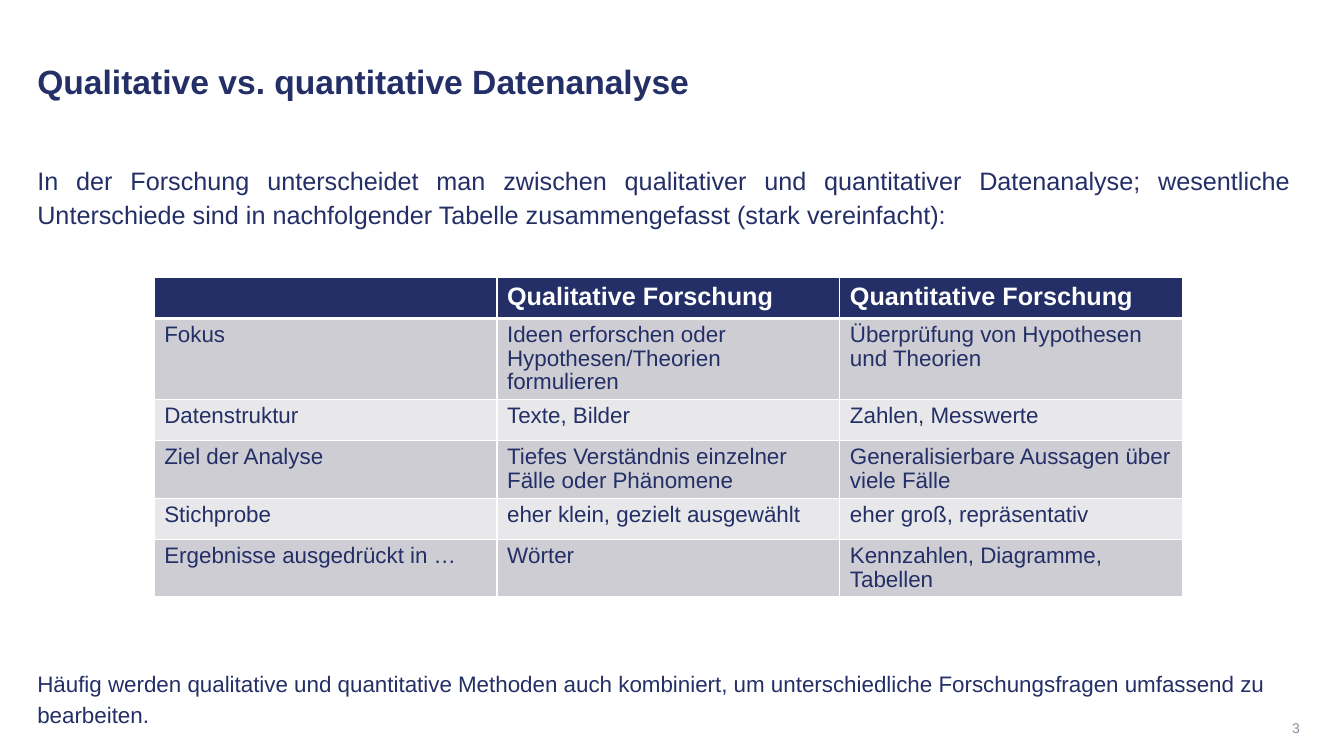
from lxml.etree import SubElement
from pptx import Presentation
from pptx.dml.color import RGBColor
from pptx.enum.text import MSO_ANCHOR, MSO_AUTO_SIZE, PP_ALIGN
from pptx.oxml.ns import qn
from pptx.util import Inches, Pt

COLORS = {
    "navy": "232F66",
    "white": "FFFFFF",
    "dark_band": "CDCDD3",
    "light_band": "E8E8EA",
    "page_number": "8D8FA0",
}

INTRO = ("In der Forschung unterscheidet man zwischen qualitativer und quantitativer "
         "Datenanalyse; wesentliche Unterschiede sind in nachfolgender Tabelle "
         "zusammengefasst (stark vereinfacht):")
CONCLUSION = ("Häufig werden qualitative und quantitative Methoden auch kombiniert, um "
              "unterschiedliche Forschungsfragen umfassend zu bearbeiten.")
COMPARISON = [
    ("", "Qualitative Forschung", "Quantitative Forschung"),
    ("Fokus", "Ideen erforschen oder Hypothesen/Theorien formulieren",
     "Überprüfung von Hypothesen und Theorien"),
    ("Datenstruktur", "Texte, Bilder", "Zahlen, Messwerte"),
    ("Ziel der Analyse", "Tiefes Verständnis einzelner Fälle oder Phänomene",
     "Generalisierbare Aussagen über viele Fälle"),
    ("Stichprobe", "eher klein, gezielt ausgewählt", "eher groß, repräsentativ"),
    ("Ergebnisse ausgedrückt in …", "Wörter", "Kennzahlen, Diagramme, Tabellen"),
]


class SlideBuilder:
    font = "Arial"

    def __init__(self, page):
        self.page = page

    def add_span(self, para, text, size, color="navy", bold=False,
                 align=PP_ALIGN.LEFT, spacing=1.0, before=0):
        para.alignment = align
        para.line_spacing = spacing
        para.space_before = Pt(before)
        span = para.add_run()
        span.text = text
        span.font.name = self.font
        span.font.size = Pt(size)
        span.font.bold = bold
        span.font.color.rgb = RGBColor.from_string(COLORS[color])

    def place(self, box, left, top, width, height, anchor=MSO_ANCHOR.TOP):
        box.left, box.top = Inches(left), Inches(top)
        box.width, box.height = Inches(width), Inches(height)
        frame = box.text_frame
        frame.word_wrap = True
        frame.auto_size = MSO_AUTO_SIZE.NONE
        frame.vertical_anchor = anchor
        return frame

    def title(self, text, *bounds):
        frame = self.place(self.page.shapes.title, *bounds)
        self.add_span(frame.paragraphs[0], text, 24, bold=True, spacing=1.15, before=10)

    def body(self, entries, *bounds):
        frame = self.place(self.page.placeholders[1], *bounds)
        for index, (text, size, align, before) in enumerate(entries):
            para = frame.add_paragraph() if index else frame.paragraphs[0]
            self.add_span(para, text, size, align=align, spacing=1.15, before=before)
            # Plain text without bullet or indent
            properties = para._p.get_or_add_pPr()
            properties.set("marL", "0")
            properties.set("indent", "0")
            SubElement(properties, qn("a:buNone"))

    def page_number(self, text, *bounds):
        box = self.page.shapes.add_textbox(0, 0, 0, 0)
        frame = self.place(box, *bounds, anchor=MSO_ANCHOR.MIDDLE)
        self.add_span(frame.paragraphs[0], text, 10, "page_number", align=PP_ALIGN.RIGHT)

    def borders(self, cell, **widths):
        properties = cell._tc.get_or_add_tcPr()
        for position, (side, width) in enumerate(widths.items()):
            line = SubElement(properties, qn(f"a:ln{side}"), w=str(Pt(width)))
            fill = SubElement(line, qn("a:solidFill"))
            SubElement(fill, qn("a:srgbClr"), val=COLORS["white"])
            # Border lines come before the cell fill
            properties.insert(position, line)

    def table(self, rows, left, top, column_width, row_height):
        columns = len(rows[0])
        table = self.page.shapes.add_table(
            len(rows), columns, Inches(left), Inches(top),
            Inches(column_width * columns), Inches(row_height * len(rows))).table
        for column in table.columns:
            column.width = Inches(column_width)
        for r, texts in enumerate(rows):
            table.rows[r].height = Inches(row_height)
            header = r == 0
            band = "navy" if header else ("dark_band" if r % 2 else "light_band")
            for c, text in enumerate(texts):
                cell = table.cell(r, c)
                cell.fill.solid()
                cell.fill.fore_color.rgb = RGBColor.from_string(COLORS[band])
                self.borders(cell, L=1, R=1, T=3 if r == 1 else 1, B=3 if header else 1)
                if text:
                    self.add_span(cell.text_frame.paragraphs[0], text,
                                  18 if header else 16, "white" if header else "navy",
                                  bold=header, spacing=1.0 if header else 0.95)


def main():
    deck = Presentation()
    deck.slide_width, deck.slide_height = Inches(13.33), Inches(7.5)
    builder = SlideBuilder(deck.slides.add_slide(deck.slide_layouts[1]))

    # Page number and title
    builder.page_number("3", 9.99, 7.02, 3, 0.4)
    builder.title("Qualitative vs. quantitative Datenanalyse", 0.27, 0.49, 12.72, 0.59)

    # Introduction and conclusion, with room for the table between them
    builder.body([
        (INTRO, 18, PP_ALIGN.JUSTIFY, 10),
        (CONCLUSION, 16, PP_ALIGN.LEFT, 311.5),
    ], 0.27, 1.54, 12.63, 5.34)

    # Comparison table
    builder.table(COMPARISON, 1.53, 2.75, 3.4, 0.41)

    deck.save("out.pptx")


if __name__ == "__main__":
    main()
